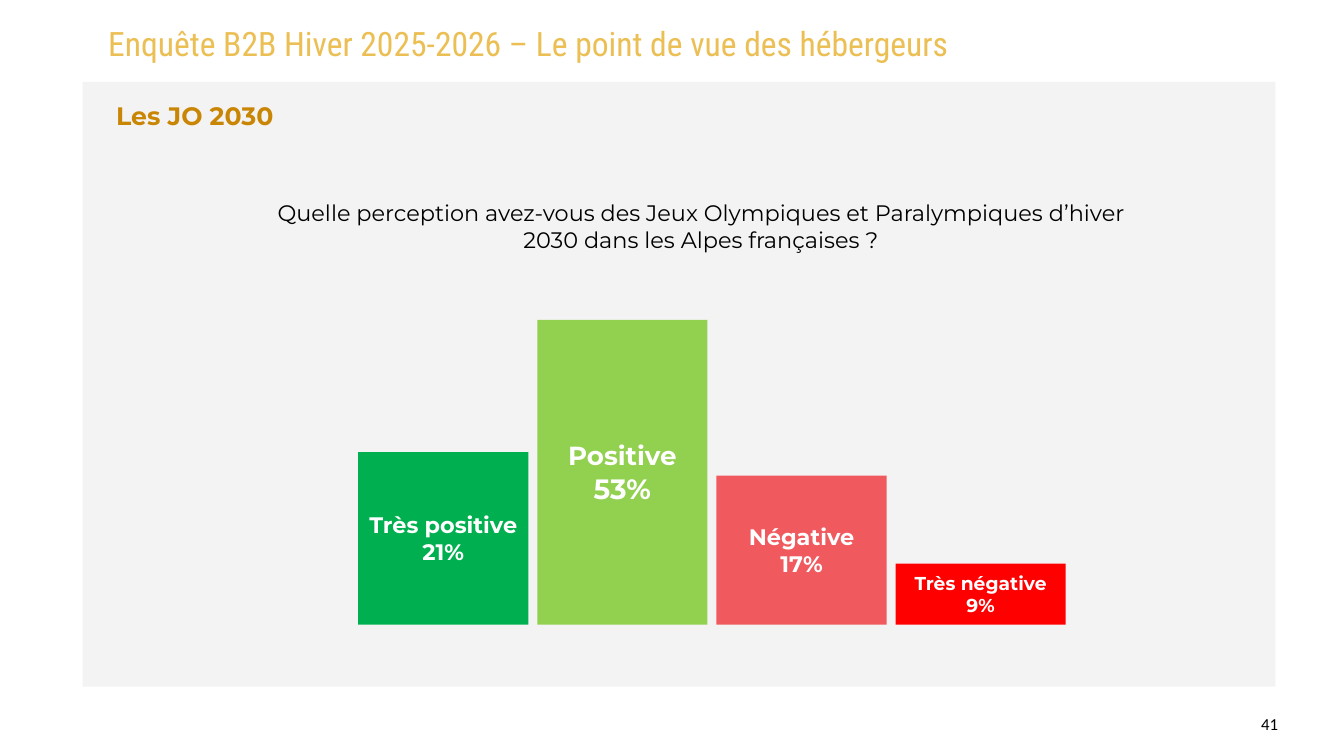
from pptx import Presentation
from pptx.dml.color import RGBColor
from pptx.enum.shapes import MSO_SHAPE
from pptx.enum.text import MSO_ANCHOR, PP_ALIGN
from pptx.util import Cm, Pt

RECTANGLE = MSO_SHAPE.RECTANGLE
LEFT, CENTER = PP_ALIGN.LEFT, PP_ALIGN.CENTER
TOP, MIDDLE = MSO_ANCHOR.TOP, MSO_ANCHOR.MIDDLE

COLORS = {
    "panel": "F4F3F3",
    "title": "EBBF53",
    "heading": "C98604",
    "text": "000000",
    "bar_text": "FFFFFF",
    "very_positive": "00B050",
    "positive": "92D050",
    "negative": "F05A5E",
    "very_negative": "FF0000",
}


class SlideBuilder:
    """Holds the slide style and draws each kind of element."""

    font = "Montserrat"

    def __init__(self, slide):
        self.slide = slide

    def color(self, name):
        return RGBColor.from_string(COLORS[name])

    def set_text(self, shape, lines, sizes, color, font=None, bold=False,
                 align=LEFT, anchor=TOP):
        text_frame = shape.text_frame
        text_frame.word_wrap = True
        text_frame.vertical_anchor = anchor
        text_frame.text = "\n".join(lines)
        for paragraph, size in zip(text_frame.paragraphs, sizes):
            paragraph.alignment = align
            for run in paragraph.runs:
                run.font.name = font or self.font
                run.font.size = Pt(size)
                run.font.bold = bold
                run.font.color.rgb = self.color(color)

    def text(self, box, text, size, color, **style):
        shape = self.slide.shapes.add_textbox(*map(Cm, box))
        self.set_text(shape, [text], [size], color, **style)

    def rectangle(self, box, fill):
        shape = self.slide.shapes.add_shape(RECTANGLE, *map(Cm, box))
        shape.shadow.inherit = False
        shape.fill.solid()
        shape.fill.fore_color.rgb = self.color(fill)
        shape.line.fill.background()
        return shape

    def bar(self, box, fill, lines, sizes):
        shape = self.rectangle(box, fill)
        self.set_text(shape, lines, sizes, "bar_text", bold=True,
                      align=CENTER, anchor=MIDDLE)


def main():
    presentation = Presentation()
    presentation.slide_width = Cm(50.8)
    presentation.slide_height = Cm(28.58)
    slide = presentation.slides.add_slide(presentation.slide_layouts[6])
    builder = SlideBuilder(slide)

    # Background panel, title and page number
    builder.rectangle((3.12, 3.1, 45.09, 22.86), "panel")
    builder.text((3.84, 0.74, 36.07, 1.8),
                 "Enquête B2B Hiver 2025-2026 – Le point de vue des hébergeurs",
                 36, "title", font="Roboto Condensed")
    builder.text((47.42, 26.85, 2.87, 1.02), "41", 18, "text", font="Calibri")

    # Heading and survey question
    builder.text((4.14, 3.68, 16.18, 1.63), "Les JO 2030", 27, "heading",
                 bold=True)
    builder.text((9.75, 7.42, 33.48, 2.31),
                 "Quelle perception avez-vous des Jeux Olympiques et "
                 "Paralympiques d’hiver 2030 dans les Alpes françaises ?",
                 24, "text", align=CENTER)

    # Answer bars standing on one baseline
    first_left, step, width, baseline = 13.54, 6.77, 6.43, 23.62
    answers = [
        ("Très positive", "21%", 6.53, "very_positive", (24, 24)),
        ("Positive", "53%", 11.53, "positive", (28, 30)),
        ("Négative", "17%", 5.64, "negative", (24, 24)),
        ("Très négative", "9%", 2.31, "very_negative", (20, 20)),
    ]
    for index, (label, share, height, fill, sizes) in enumerate(answers):
        box = (first_left + index * step, baseline - height, width, height)
        builder.bar(box, fill, (label, share), sizes)

    presentation.save("out.pptx")


if __name__ == "__main__":
    main()
